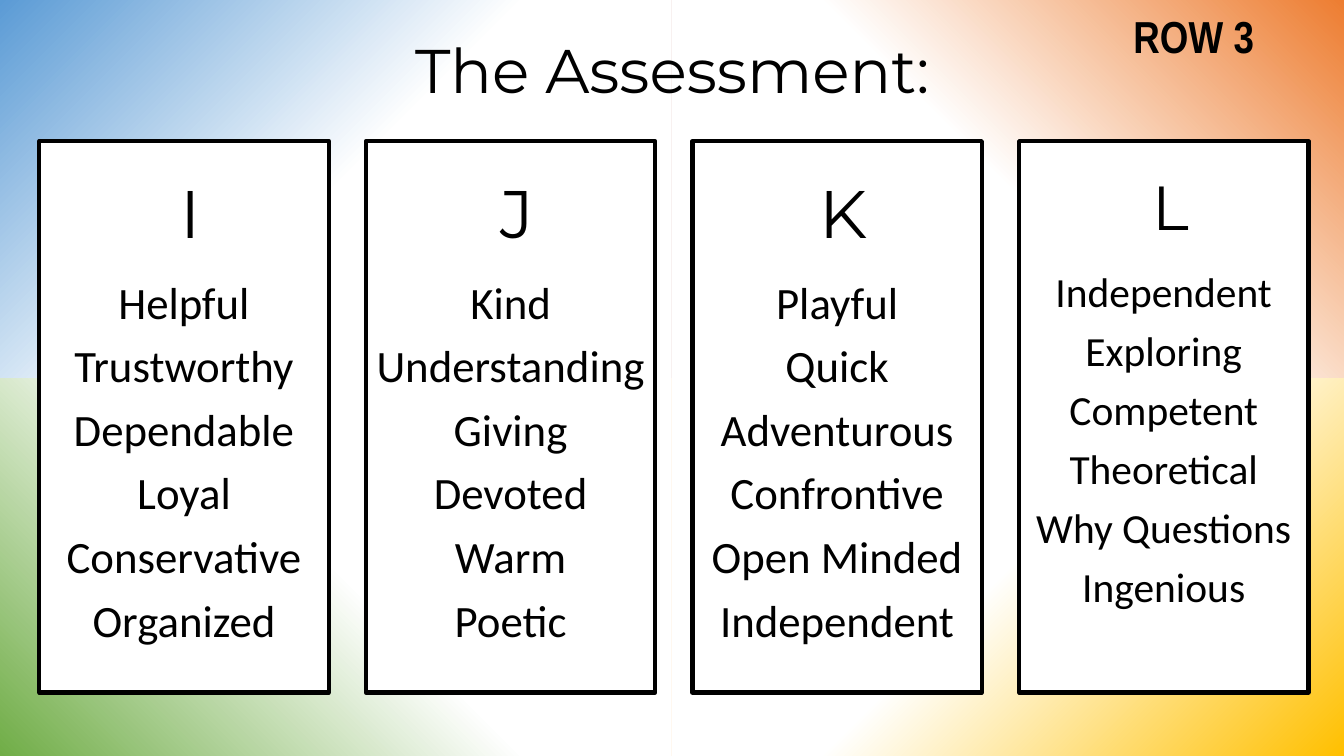
from dataclasses import dataclass

from pptx import Presentation
from pptx import util as u
from pptx.dml import color
from pptx.enum import shapes, text
from pptx.oxml import xmlchemy
from pptx.oxml import parse_xml
from pptx.oxml.ns import nsdecls

SLIDE_WIDTH, SLIDE_HEIGHT = u.Inches(13.33), u.Inches(7.5)
BLACK, WHITE = "000000", "FFFFFF"
FIRST_LEFT, COLUMN_STEP = 2.93, 24.3
COLUMN_TOP, COLUMN_WIDTH, COLUMN_HEIGHT = 18.67, 21.53, 72.93


@dataclass
class Corner:
    column: int
    row: int
    tint: str
    angle: int


@dataclass
class Column:
    letter: str
    traits: tuple[str, ...]
    scale: float = 1.0


CORNERS = (
    Corner(0, 0, "5B9BD5", 315),
    Corner(1, 0, "ED7D31", 225),
    Corner(0, 1, "70AD47", 45),
    Corner(1, 1, "FFC000", 135),
)

COLUMNS = (
    Column("I", ("Helpful", "Trustworthy", "Dependable", "Loyal", "Conservative", "Organized")),
    Column("J", ("Kind", "Understanding", "Giving", "Devoted", "Warm", "Poetic")),
    Column("K", ("Playful", "Quick", "Adventurous", "Confrontive", "Open Minded", "Independent")),
    Column(
        "L",
        ("Independent", "Exploring", "Competent", "Theoretical", "Why Questions", "Ingenious"),
        0.925,
    ),
)


def rgb(code: str) -> color.RGBColor:
    return color.RGBColor.from_string(code)


def area(left: float, top: float, width: float, height: float) -> tuple[int, int, int, int]:
    return (
        round(SLIDE_WIDTH * left / 100),
        round(SLIDE_HEIGHT * top / 100),
        round(SLIDE_WIDTH * width / 100),
        round(SLIDE_HEIGHT * height / 100),
    )


def place(shape, bounds: tuple[int, int, int, int]) -> None:
    shape.left, shape.top, shape.width, shape.height = bounds


def draw_background(page) -> None:
    group = page.shapes.add_group_shape()
    for corner in CORNERS:
        panel = group.shapes.add_shape(
            shapes.MSO_SHAPE.RECTANGLE, *area(corner.column * 50, corner.row * 50, 50, 50)
        )
        panel.shadow.inherit = False
        panel.line.fill.background()
        panel.fill.gradient()
        panel.fill.gradient_angle = corner.angle
        for stop, code, position in zip(panel.fill.gradient_stops, (corner.tint, WHITE), (0, 0.5)):
            stop.color.rgb = rgb(code)
            stop.position = position
    page.shapes._spTree.insert(2, group._element)


def style(para, font: str, size: float, spacing: float, bold: bool = False) -> None:
    para.alignment = text.PP_ALIGN.CENTER
    para.line_spacing = spacing
    para.font.name = font
    para.font.size = u.Pt(size)
    para.font.bold = bold
    para.font.color.rgb = rgb(BLACK)


def write_heading(box, words: str, font: str, size: float, bold: bool = False) -> None:
    frame = box.text_frame
    frame.word_wrap = True
    frame.auto_size = text.MSO_AUTO_SIZE.NONE
    frame.vertical_anchor = text.MSO_ANCHOR.MIDDLE
    frame.text = words
    style(frame.paragraphs[0], font, size, 0.9, bold)


def remove_bullet(para, margin: int = 0) -> None:
    properties = para._p.get_or_add_pPr()
    properties.set("marL", str(margin))
    properties.set("indent", "0")
    properties.append(parse_xml(f"<a:buNone {nsdecls('a')}/>"))


def fill_column(box, column: Column) -> None:
    box.fill.solid()
    box.fill.fore_color.rgb = rgb(WHITE)
    box.line.color.rgb = rgb(BLACK)
    box.line.width = u.Pt(3)
    frame = box.text_frame
    frame.word_wrap = True
    frame.auto_size = text.MSO_AUTO_SIZE.NONE
    frame.vertical_anchor = text.MSO_ANCHOR.TOP
    frame.margin_left = frame.margin_right = u.Inches(0.05)
    frame.margin_top = round(SLIDE_HEIGHT * 0.06 * column.scale)
    frame.text = "\n".join((column.letter, *column.traits))
    letter, *traits = frame.paragraphs
    remove_bullet(letter, u.Inches(0.13))
    style(letter, "Montserrat", 48 * column.scale, 0.8)
    letter.space_before = u.Pt(0)
    letter.space_after = u.Pt(9.6)
    for para in traits:
        remove_bullet(para)
        style(para, "Calibri", 32 * column.scale, 1.1)
        para.space_before = u.Pt(3.2)


def draw_columns(page) -> None:
    for index, column in enumerate(COLUMNS):
        bounds = area(FIRST_LEFT + index * COLUMN_STEP, COLUMN_TOP, COLUMN_WIDTH, COLUMN_HEIGHT)
        if index == 0:
            box = page.placeholders[1]
            place(box, bounds)
        else:
            box = page.shapes.add_shape(shapes.MSO_SHAPE.RECTANGLE, *bounds)
            box.shadow.inherit = False
        fill_column(box, column)


def main() -> None:
    deck = Presentation()
    deck.slide_width, deck.slide_height = SLIDE_WIDTH, SLIDE_HEIGHT
    page = deck.slides.add_slide(deck.slide_layouts[1])
    page.background.fill.solid()
    page.background.fill.fore_color.rgb = rgb(BLACK)
    draw_background(page)
    place(page.shapes.title, area(6.9, 0, 86.27, 19.33))
    write_heading(page.shapes.title, "The Assessment:", "Montserrat", 44)
    draw_columns(page)
    row_label = page.shapes.add_textbox(*area(77.64, 0, 22.36, 10.4))
    write_heading(row_label, "ROW 3", "Arial Narrow", 32, True)
    deck.save("out.pptx")


if __name__ == "__main__":
    main()
